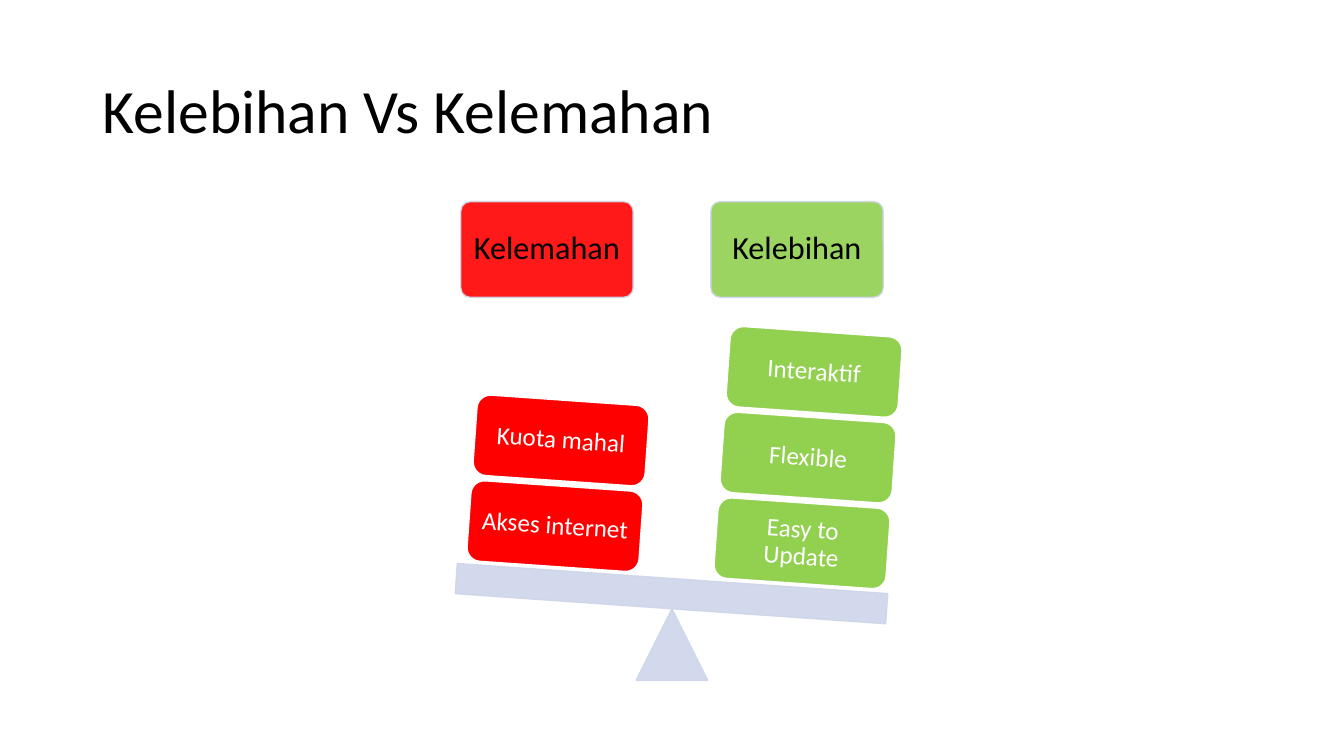
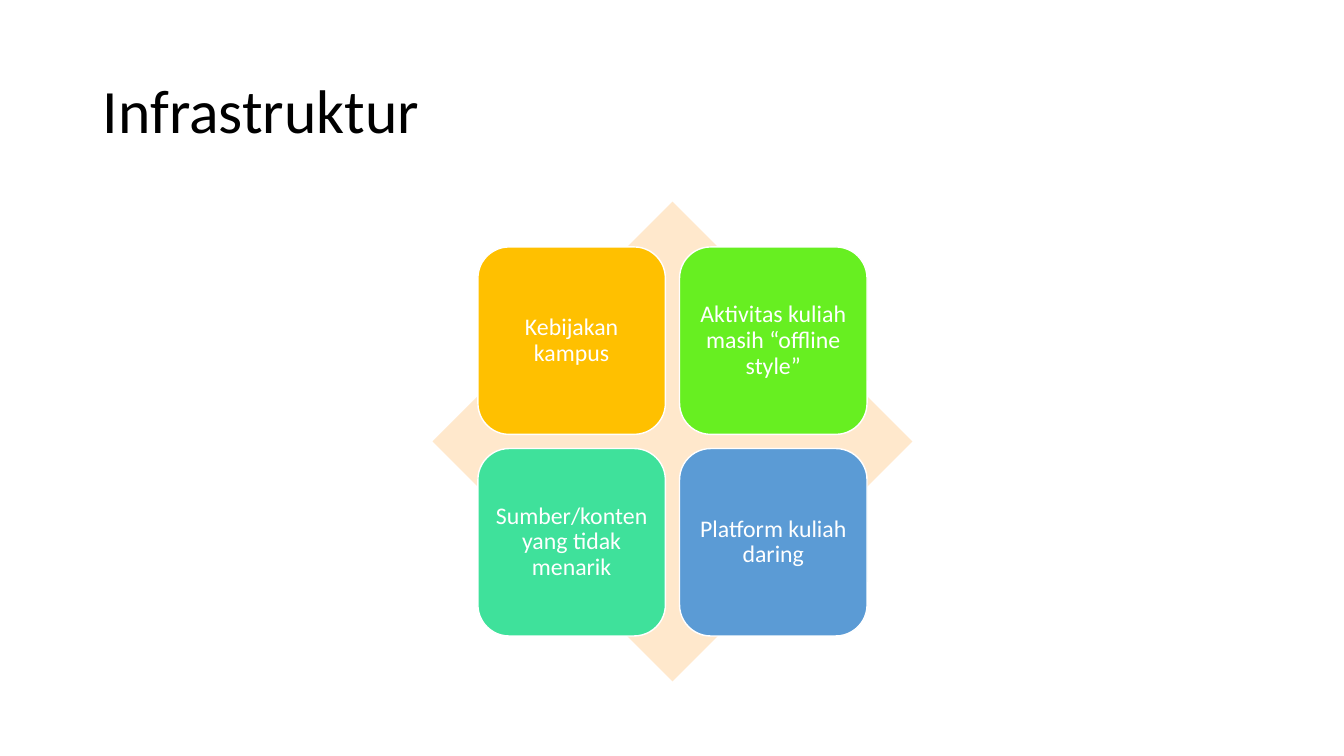
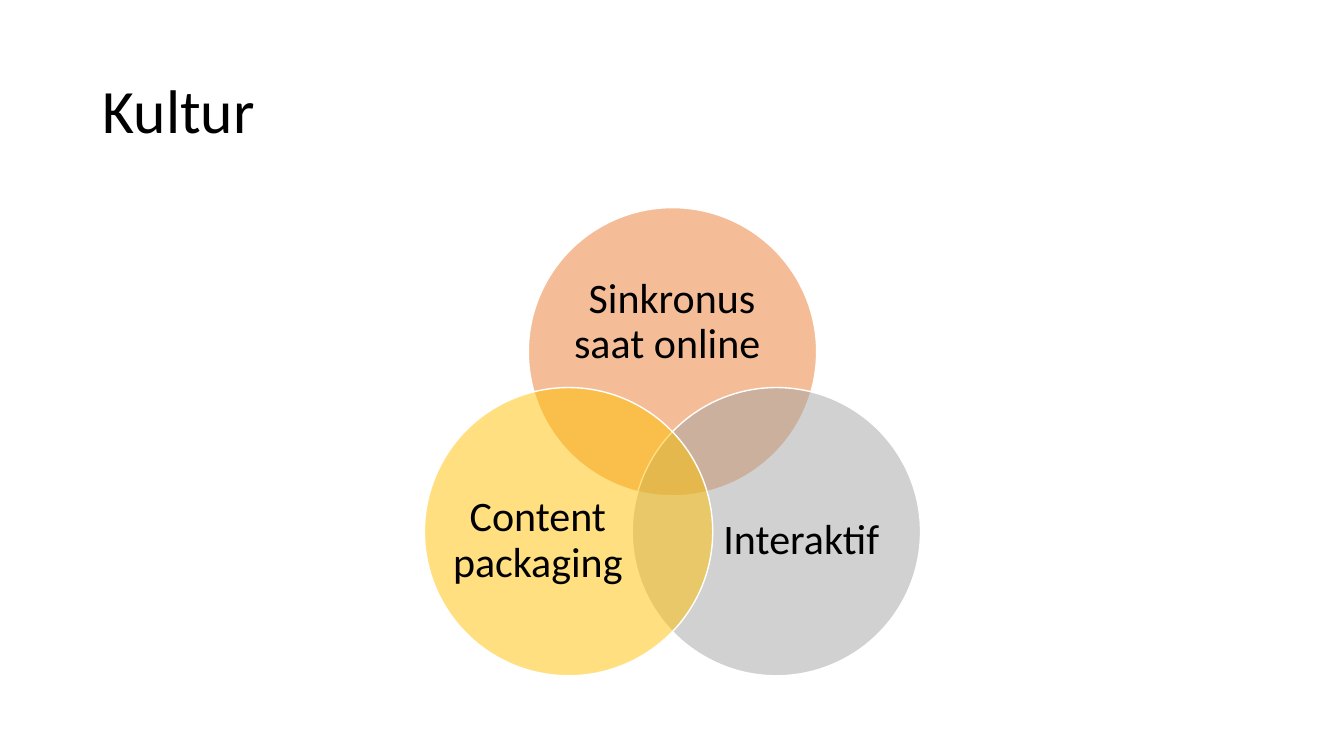
from dataclasses import dataclass
from math import cos, radians, sin
from typing import Optional

from lxml import etree
from pptx import Presentation
from pptx.dml.color import RGBColor
from pptx.enum import shapes, text
from pptx.oxml.ns import qn
from pptx.util import Inches, Pt

FONT = "Calibri"
BLACK, WHITE = "000000", "FFFFFF"
RED, GREEN, PALE = "FF0000", "92D050", "CFD5EA"
KIND = shapes.MSO_SHAPE


@dataclass
class Box:
    x: float
    y: float
    w: float
    h: float


@dataclass
class Look:
    fill: str
    line: Optional[str] = WHITE
    alpha: int = 100      # fill opacity in percent
    edge: int = 100       # line opacity in percent
    turn: float = 0
    round: Optional[float] = None


@dataclass
class Label:
    words: str
    size: int
    color: str = WHITE
    pad: float = 0.07


def paint(fill, color: str, alpha: int = 100) -> None:
    """Give a fill a solid colour with an opacity."""
    fill.solid()
    fill.fore_color.rgb = RGBColor.from_string(color)
    if alpha < 100:
        node = fill._xPr.find(qn("a:solidFill"))[0]
        etree.SubElement(node, qn("a:alpha")).set("val", str(alpha * 1000))


def write(shape, label: Label, align=text.PP_ALIGN.CENTER) -> None:
    frame = shape.text_frame
    frame.text = label.words
    frame.word_wrap = True
    frame.auto_size = text.MSO_AUTO_SIZE.NONE
    frame.vertical_anchor = text.MSO_ANCHOR.MIDDLE
    frame.margin_left = frame.margin_right = Inches(label.pad)
    frame.margin_top = frame.margin_bottom = Inches(label.pad)
    para = frame.paragraphs[0]
    para.alignment = align
    para.line_spacing = 0.9
    font = para.runs[0].font
    font.name, font.size = FONT, Pt(label.size)
    font.color.rgb = RGBColor.from_string(label.color)


def place(box: Box) -> tuple:
    return tuple(Inches(v) for v in (box.x, box.y, box.w, box.h))


def draw(slide, kind, box: Box, look: Look, label: Optional[Label] = None) -> None:
    shape = slide.shapes.add_shape(kind, *place(box))
    shape.shadow.inherit = False
    shape.rotation = look.turn
    if look.round is not None:
        shape.adjustments[0] = look.round
    paint(shape.fill, look.fill, look.alpha)
    if look.line:
        shape.line.width = Pt(1)
        paint(shape.line.fill, look.line, look.edge)
    else:
        shape.line.fill.background()
    if label:
        write(shape, label)


def start(deck, title: str):
    """Add a title-only slide with the shared title style."""
    slide = deck.slides.add_slide(deck.slide_layouts[5])
    head = slide.shapes.title
    head.left, head.top, head.width, head.height = place(Box(0.92, 0.4, 11.5, 1.45))
    write(head, Label(title, 44, BLACK, 0.1), text.PP_ALIGN.LEFT)
    return slide


def scale(deck) -> None:
    slide = start(deck, "Kelebihan Vs Kelemahan")
    wide, tilt = 1.71, 4
    # Headings
    for x, words, color in ((4.57, "Kelemahan", RED), (7.05, "Kelebihan", GREEN)):
        draw(slide, KIND.ROUNDED_RECTANGLE, Box(x, 2, wide, 0.95),
             Look(color, PALE, 90, 90, round=0.1), Label(words, 23, BLACK, 0.1))
    # Pivot and beam
    draw(slide, KIND.ISOSCELES_TRIANGLE, Box(6.31, 6.04, 0.71, 0.71),
         Look(PALE, PALE, 90, 90))
    draw(slide, KIND.RECTANGLE, Box(4.52, 5.74, 4.28, 0.3),
         Look(PALE, PALE, 90, 90, tilt))
    # Weights, piled from the beam upwards
    piles = (
        (7.1, 4.99, GREEN, ("Easy to Update", "Flexible", "Interaktif")),
        (4.65, 4.82, RED, ("Akses internet", "Kuota mahal")),
    )
    for x, y, color, names in piles:
        for i, words in enumerate(names):
            draw(slide, KIND.ROUNDED_RECTANGLE,
                 Box(x + 0.06 * i, y - 0.85 * i, wide, 0.8),
                 Look(color, turn=tilt), Label(words, 18))


def matrix(deck) -> None:
    slide = start(deck, "Infrastruktur")
    draw(slide, KIND.DIAMOND, Box(4.29, 2, 4.76, 4.76), Look("FFE8CC", None))
    # Two by two tiles
    tiles = (
        ("Kebijakan kampus", "FFC000"),
        ("Aktivitas kuliah masih “offline style”", "67EF21"),
        ("Sumber/konten yang tidak menarik", "3FE19B"),
        ("Platform kuliah daring", "5B9BD5"),
    )
    side, step = 1.86, 2
    for i, (words, color) in enumerate(tiles):
        row, col = divmod(i, 2)
        draw(slide, KIND.ROUNDED_RECTANGLE,
             Box(4.74 + step * col, 2.45 + step * row, side, side),
             Look(color), Label(words, 17))


def venn(deck) -> None:
    slide = start(deck, "Kultur")
    size, reach = 2.86, 1.19
    rings = (
        ("Sinkronus saat online ", "ED7D31", Box(5.62, 2.56, 2.09, 1.28)),
        ("Interaktif ", "A5A5A5", Box(7.14, 4.58, 1.71, 1.57)),
        ("Content packaging ", "FFC000", Box(4.48, 4.58, 1.71, 1.57)),
    )
    # Circles spread evenly round a centre, clockwise from the top
    for i, (words, color, area) in enumerate(rings):
        turn = radians(120 * i - 90)
        x = 6.67 + reach * cos(turn) - size / 2
        y = 4.68 + reach * sin(turn) - size / 2
        draw(slide, KIND.OVAL, Box(x, y, size, size), Look(color, alpha=50))
        write(slide.shapes.add_textbox(*place(area)), Label(words, 30, BLACK, 0))


def main() -> None:
    deck = Presentation()
    deck.slide_width, deck.slide_height = Inches(13.33), Inches(7.5)
    for build in (scale, matrix, venn):
        build(deck)
    deck.save("out.pptx")


if __name__ == "__main__":
    main()
